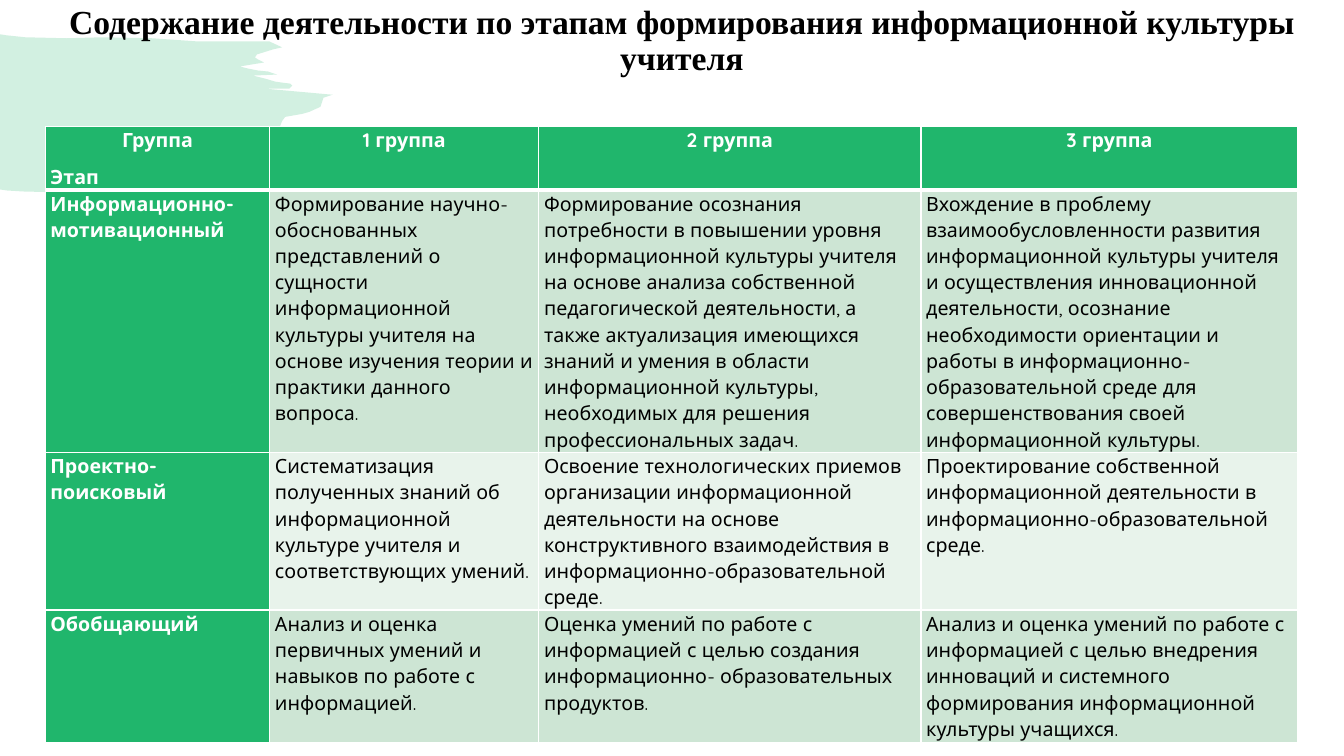
"""Build a slide with a table of teacher information culture stages."""
from dataclasses import dataclass

from lxml.etree import SubElement
from pptx import Presentation
from pptx.dml.color import RGBColor
from pptx.enum.text import MSO_ANCHOR, PP_ALIGN
from pptx.oxml import parse_xml
from pptx.oxml.ns import nsdecls, qn
from pptx.util import Cm, Pt

TITLE = "Содержание деятельности по этапам формирования информационной культуры учителя"
HEADER = [["Группа", "Этап"], ["1 группа"], ["2 группа"], ["3 группа"]]
STAGES = [
    ("Информационно-мотивационный",
     "Формирование научно-обоснованных представлений о сущности информационной культуры "
     "учителя на основе изучения теории и практики данного вопроса.",
     "Формирование осознания потребности в повышении уровня информационной культуры учителя "
     "на основе анализа собственной педагогической деятельности, а также актуализация "
     "имеющихся знаний и умения в области информационной культуры, необходимых для решения "
     "профессиональных задач.",
     "Вхождение в проблему взаимообусловленности развития информационной культуры учителя и "
     "осуществления инновационной деятельности, осознание необходимости ориентации и работы "
     "в информационно-образовательной среде для совершенствования своей информационной культуры."),
    ("Проектно-поисковый",
     "Систематизация полученных знаний об информационной культуре учителя и соответствующих умений.",
     "Освоение технологических приемов организации информационной деятельности на основе "
     "конструктивного взаимодействия в информационно-образовательной среде.",
     "Проектирование собственной информационной деятельности в "
     "информационно-образовательной среде."),
    ("Обобщающий",
     "Анализ и оценка первичных умений и навыков по работе с информацией.",
     "Оценка умений по работе с информацией с целью создания информационно- образовательных "
     "продуктов.",
     "Анализ и оценка умений по работе с информацией с целью внедрения инноваций и системного "
     "формирования информационной культуры учащихся."),
]
COLUMNS = [5.66, 6.78, 9.63, 9.5]
ROWS = [1.6, 6.62, 3.97, 3.35]
BRUSH = [
    (0, 34), (6, 35), (25, 37), (66, 38), (102, 37), (151, 38), (194, 41), (248, 41),
    (267, 41), (280, 47), (271, 49), (255, 54), (253, 57), (256, 59), (262, 62), (238, 66),
    (246, 68), (256, 70), (266, 71), (275, 74), (251, 75), (263, 78), (273, 81), (280, 82),
    (288, 83), (290, 85), (287, 88), (284, 88), (263, 88), (330, 94), (321, 97), (318, 106),
    (307, 111), (300, 113), (283, 116), (280, 120), (278, 125), (274, 128), (308, 128),
    (269, 138), (273, 142), (252, 148), (263, 148), (197, 172), (102, 188), (65, 191),
    (23, 190), (7, 189), (0, 188),
]


@dataclass(frozen=True)
class Theme:
    green: str = "20B66C"
    bands: tuple = ("CDE5D4", "E8F3EB")
    white: str = "FFFFFF"
    black: str = "000000"
    title_font: str = "Times New Roman"
    body_font: str = "Quicksand"
    title_size: int = 24
    body_size: int = 14
    brush_alpha: int = 20


THEME = Theme()


def add_run(p, text, font, size, color, bold):
    r = p.add_run()
    r.text = text
    r.font.name, r.font.size, r.font.bold = font, Pt(size), bold
    r.font.color.rgb = RGBColor.from_string(color)


def add_brush(s):
    builder = s.shapes.build_freeform(*BRUSH[0], scale=Cm(2.54) / 100)
    builder.add_line_segments(BRUSH[1:], close=True)
    sp = builder.convert_to_shape()
    sp.shadow.inherit = False
    sp.line.fill.background()
    sp.fill.solid()
    sp.fill.fore_color.rgb = RGBColor.from_string(THEME.green)
    color = sp.fill._xPr.find(qn("a:solidFill"))[0]
    SubElement(color, qn("a:alpha"), val=str(THEME.brush_alpha * 1000))


def add_title(s):
    tf = s.shapes.add_textbox(Cm(1.4), Cm(0.06), Cm(31.57), Cm(2.2)).text_frame
    tf.word_wrap = True
    tf.margin_top = Cm(0.08)
    p = tf.paragraphs[0]
    p.alignment, p.line_spacing = PP_ALIGN.CENTER, 0.9
    add_run(p, TITLE, THEME.title_font, THEME.title_size, THEME.black, True)


def set_borders(cell, top, bottom):
    tcPr = cell._tc.get_or_add_tcPr()
    for i, (side, width) in enumerate(zip("LRTB", (1, 1, top, bottom))):
        tcPr.insert(i, parse_xml(
            f'<a:ln{side} {nsdecls("a")} w="{Pt(width)}"><a:solidFill>'
            f'<a:srgbClr val="{THEME.white}"/></a:solidFill></a:ln{side}>'))


def fill_cell(cell, lines, row, col):
    is_head = row == 0 or col == 0
    fill = THEME.green if is_head else THEME.bands[(row - 1) % 2]
    cell.fill.solid()
    cell.fill.fore_color.rgb = RGBColor.from_string(fill)
    cell.margin_left = cell.margin_right = Cm(0.13)
    cell.margin_top = cell.margin_bottom = 0
    cell.vertical_anchor = MSO_ANCHOR.TOP
    set_borders(cell, 3 if row == 1 else 1, 3 if row == 0 else 1)
    tf = cell.text_frame
    for i, line in enumerate(lines):
        p = tf.add_paragraph() if i else tf.paragraphs[0]
        p.alignment = PP_ALIGN.CENTER if row == 0 and i == 0 else PP_ALIGN.LEFT
        p.line_spacing, p.space_after = 1.07, Pt(8)
        color = THEME.white if is_head else THEME.black
        add_run(p, line, THEME.body_font, THEME.body_size, color, is_head)


def add_stages(s):
    grid = [HEADER] + [[[text] for text in stage] for stage in STAGES]
    table = s.shapes.add_table(len(ROWS), len(COLUMNS), Cm(1.14), Cm(3.18),
                               Cm(sum(COLUMNS)), Cm(sum(ROWS))).table
    for column, width in zip(table.columns, COLUMNS):
        column.width = Cm(width)
    for row, height in zip(table.rows, ROWS):
        row.height = Cm(height)
    for i, cells in enumerate(grid):
        for j, lines in enumerate(cells):
            fill_cell(table.cell(i, j), lines, i, j)


def main():
    prs = Presentation()
    prs.slide_width, prs.slide_height = Cm(33.87), Cm(19.05)
    s = prs.slides.add_slide(prs.slide_layouts[6])
    add_brush(s)
    add_title(s)
    add_stages(s)
    prs.save("out.pptx")


if __name__ == "__main__":
    main()
